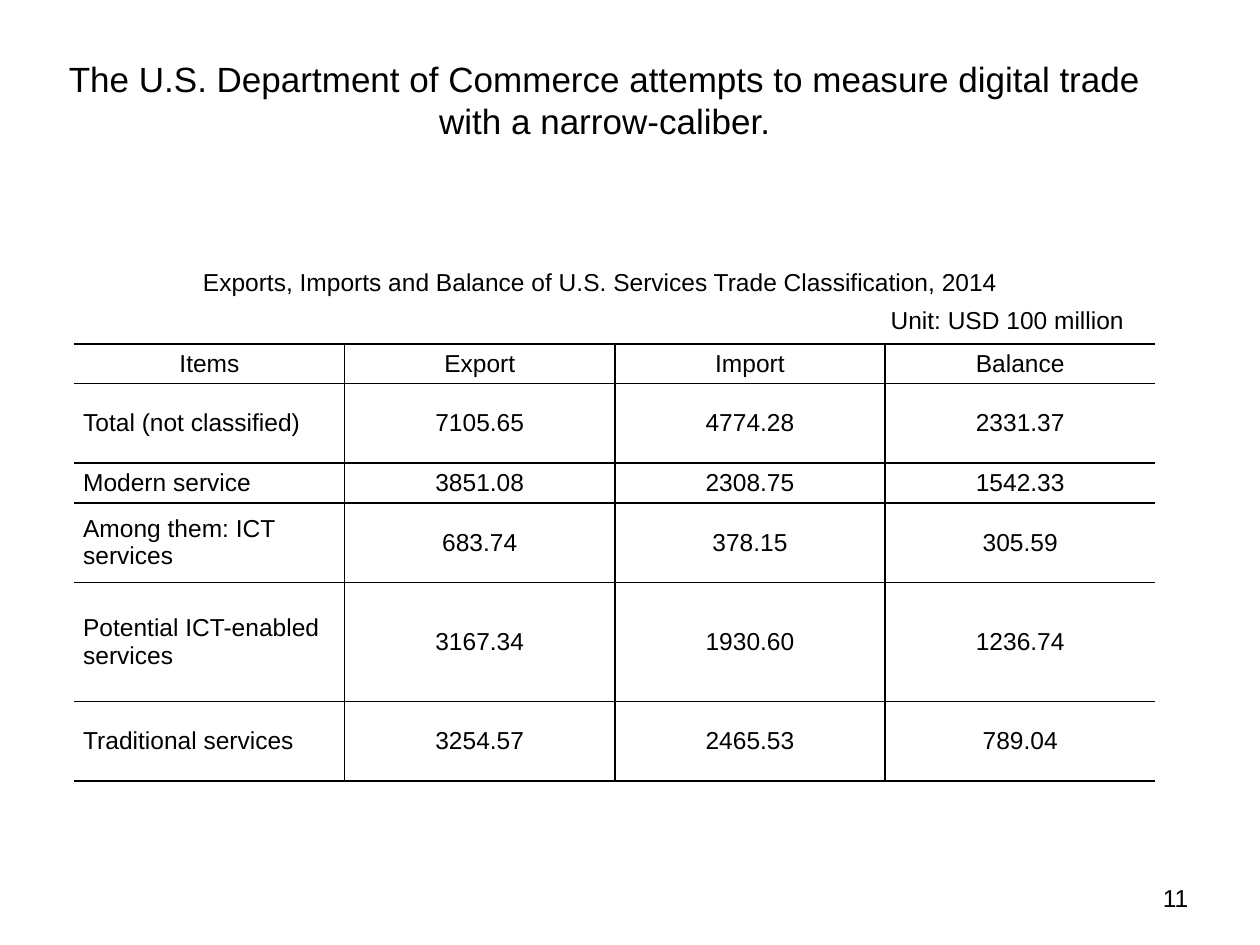
from lxml import etree
from pptx import Presentation
from pptx import util as u
from pptx.dml import color
from pptx.enum import text
from pptx.oxml import ns

THEME = {"font": "Arial", "ink": "000000", "title": 20, "body": 14, "rule": 1}
LEFT, CENTER, RIGHT = text.PP_ALIGN.LEFT, text.PP_ALIGN.CENTER, text.PP_ALIGN.RIGHT

TITLE = ("The U.S. Department of Commerce attempts to measure digital trade "
         "with a narrow-caliber.", (0.35, 0.41, 8.9, 0.77))
LABELS = [
    ("Exports, Imports and Balance of U.S. Services Trade Classification, 2014",
     (1.3, 2.07, 6.93, 0.34), CENTER),
    ("Unit: USD 100 million", (6.83, 2.37, 2.33, 0.34), CENTER),
    ("11", (7.2, 6.96, 2.33, 0.52), RIGHT),
]
TRADE = [
    ("Items", "Export", "Import", "Balance"),
    ("Total (not classified)", "7105.65", "4774.28", "2331.37"),
    ("Modern service", "3851.08", "2308.75", "1542.33"),
    ("Among them: ICT services", "683.74", "378.15", "305.59"),
    ("Potential ICT-enabled services", "3167.34", "1930.60", "1236.74"),
    ("Traditional services", "3254.57", "2465.53", "789.04"),
]
TABLE_AREA = (0.59, 2.73, 8.58, 3.47)
ROW_UNITS = (1, 2, 1, 2, 3, 2)


def apply(target, values):
    for name, value in values.items():
        setattr(target, name, value)


def write(frame, words, size, align):
    para = frame.paragraphs[0]
    para.alignment = align
    span = para.add_run()
    span.text = words
    apply(span.font, {"name": THEME["font"], "size": u.Pt(size)})
    span.font.color.rgb = color.RGBColor.from_string(THEME["ink"])


def fill_box(box, words, area, size, align):
    apply(box, dict(zip(("left", "top", "width", "height"), map(u.Inches, area))))
    apply(box.text_frame, {"word_wrap": True, "auto_size": text.MSO_AUTO_SIZE.NONE,
                           "vertical_anchor": text.MSO_ANCHOR.TOP})
    write(box.text_frame, words, size, align)


def rule_cell(cell, sides):
    properties = cell._tc.get_or_add_tcPr()
    for position, (side, shown) in enumerate(sides.items()):
        line = etree.Element(ns.qn(f"a:ln{side}"), w=str(u.Pt(THEME["rule"])))
        if shown:
            fill = etree.SubElement(line, ns.qn("a:solidFill"))
            etree.SubElement(fill, ns.qn("a:srgbClr"), val=THEME["ink"])
        else:
            etree.SubElement(line, ns.qn("a:noFill"))
        properties.insert(position, line)


def add_trade_table(page):
    row_count, column_count = len(TRADE), len(TRADE[0])
    table = page.shapes.add_table(row_count, column_count, *map(u.Inches, TABLE_AREA)).table
    apply(table, {"first_row": False, "horz_banding": False})
    for column in table.columns:
        column.width = u.Inches(TABLE_AREA[2] / column_count)
    for row, units in zip(table.rows, ROW_UNITS):
        row.height = u.Inches(TABLE_AREA[3] * units / sum(ROW_UNITS))
    for r, record in enumerate(TRADE):
        for c, words in enumerate(record):
            cell = table.cell(r, c)
            apply(cell, {"vertical_anchor": text.MSO_ANCHOR.MIDDLE,
                         "margin_left": u.Inches(0.07), "margin_right": u.Inches(0.07),
                         "margin_top": 0, "margin_bottom": 0})
            cell.fill.background()
            rule_cell(cell, {"L": c > 0, "R": c < column_count - 1, "T": True, "B": True})
            write(cell.text_frame, words, THEME["body"], LEFT if r and not c else CENTER)


def main():
    deck = Presentation()
    apply(deck, {"slide_width": u.Inches(10), "slide_height": u.Inches(7.5)})
    page = deck.slides.add_slide(deck.slide_layouts[5])
    fill_box(page.shapes.title, *TITLE, THEME["title"], CENTER)
    add_trade_table(page)
    for words, area, align in LABELS:
        box = page.shapes.add_textbox(*map(u.Inches, area))
        fill_box(box, words, area, THEME["body"], align)
    deck.save("out.pptx")


if __name__ == "__main__":
    main()
